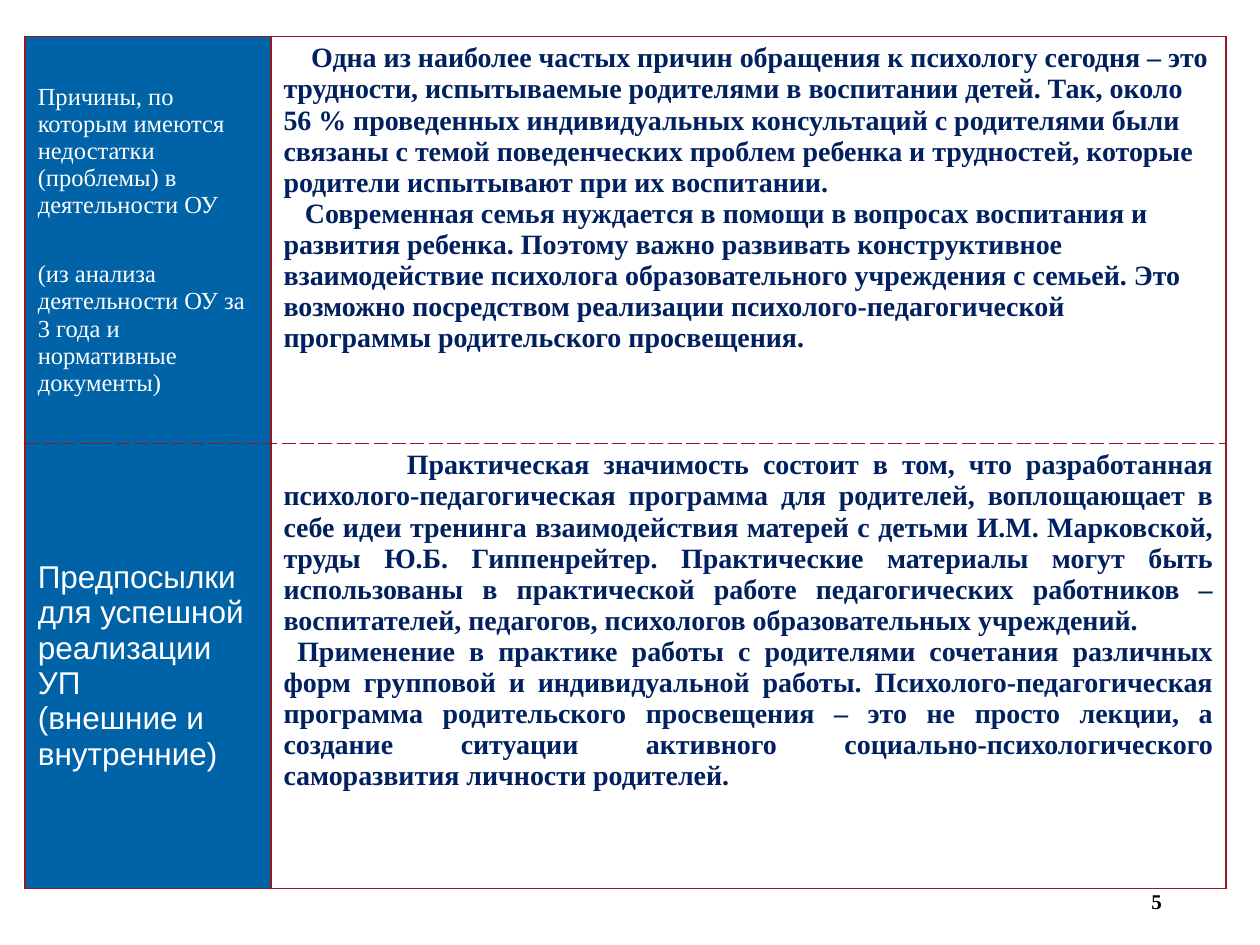
"""Build a slide with a two-row table of causes and preconditions."""
import pptx
import pptx.dml.color
import pptx.enum.text
import pptx.oxml
import pptx.oxml.ns
import pptx.util
from pptx.util import Inches

BLUE = pptx.dml.color.RGBColor(0x00, 0x62, 0xA7)
NAVY = pptx.dml.color.RGBColor(0x00, 0x20, 0x60)
RED = pptx.dml.color.RGBColor(0x92, 0x1A, 0x1D)
WHITE = pptx.dml.color.RGBColor(0xFF, 0xFF, 0xFF)
BLACK = pptx.dml.color.RGBColor(0x00, 0x00, 0x00)
SERIF, SANS = "Times New Roman", "Arial"
ALIGN = pptx.enum.text.PP_ALIGN
MIDDLE = pptx.enum.text.MSO_ANCHOR.MIDDLE
TOP = pptx.enum.text.MSO_ANCHOR.TOP

REASONS = [
    "Причины, по которым имеются недостатки (проблемы) в деятельности ОУ",
    "(из анализа деятельности ОУ за 3 года и нормативные документы)",
]
REQUESTS = [
    "Одна из наиболее частых причин обращения к психологу сегодня – это трудности, "
    "испытываемые родителями в воспитании детей. Так, около 56 % проведенных "
    "индивидуальных консультаций с родителями были связаны с темой поведенческих "
    "проблем ребенка и трудностей, которые родители испытывают при их воспитании.",
    "Современная семья нуждается в помощи в вопросах воспитания и развития ребенка. "
    "Поэтому важно развивать конструктивное взаимодействие психолога образовательного "
    "учреждения с семьей. Это возможно посредством реализации психолого-педагогической "
    "программы родительского просвещения.",
]
PRECONDITIONS = ["Предпосылки для успешной реализации УП", "(внешние и внутренние)"]
SIGNIFICANCE = [
    "Практическая значимость состоит в том, что разработанная "
    "психолого-педагогическая программа для родителей, воплощающает в себе идеи "
    "тренинга взаимодействия матерей с детьми И.М. Марковской, труды Ю.Б. Гиппенрейтер. "
    "Практические материалы могут быть использованы в практической работе "
    "педагогических работников – воспитателей, педагогов, психологов образовательных "
    "учреждений.",
    "Применение в практике работы с родителями сочетания различных форм групповой и "
    "индивидуальной работы. Психолого-педагогическая программа родительского "
    "просвещения – это не просто лекции, а создание ситуации активного "
    "социально-психологического саморазвития личности родителей.",
]


class Builder:
    """Holds the style and the current slide."""

    def __init__(self, s):
        """Keep the slide to draw on."""
        self.s = s

    def fill_text(self, tf, texts, size, color, font=SERIF, bold=False,
                  align=ALIGN.LEFT, gap=0, indents=()):
        """Fill a text frame and format its paragraphs."""
        tf.text = "\n".join(texts)
        for p in tf.paragraphs:
            p.alignment = align
            p.space_before = p.space_after = pptx.util.Pt(gap)
            for r in p.runs:
                r.font.name, r.font.size = font, pptx.util.Pt(size)
                r.font.bold, r.font.color.rgb = bold, color
        for p, indent in zip(tf.paragraphs, indents):
            pPr = p._p.get_or_add_pPr()
            pPr.set("marL", "0")
            pPr.set("indent", str(Inches(indent)))

    def text(self, texts, left, top, width, height, **style):
        """Add a text box."""
        tf = self.s.shapes.add_textbox(
            Inches(left), Inches(top), Inches(width), Inches(height)).text_frame
        tf.word_wrap = True
        tf.vertical_anchor = MIDDLE
        self.fill_text(tf, texts, **style)

    def table(self, left, top, widths, heights):
        """Add a plain table and return it."""
        table = self.s.shapes.add_table(
            len(heights), len(widths), Inches(left), Inches(top),
            Inches(sum(widths)), Inches(sum(heights))).table
        table.first_row = table.horz_banding = False
        for column, width in zip(table.columns, widths):
            column.width = Inches(width)
        for row, height in zip(table.rows, heights):
            row.height = Inches(height)
        return table

    def cell(self, cell, texts, fill, anchor, dashed, **style):
        """Fill one cell and rule its borders, with one side dashed."""
        self.fill_text(cell.text_frame, texts, **style)
        cell.vertical_anchor = anchor
        tcPr = cell._tc.get_or_add_tcPr()
        for side in ("lnL", "lnR", "lnT", "lnB"):
            dash = "sysDash" if side == dashed else "solid"
            tcPr.append(pptx.oxml.parse_xml(
                f'<a:{side} {pptx.oxml.ns.nsdecls("a")} w="{pptx.util.Pt(1)}">'
                f'<a:solidFill><a:srgbClr val="{RED}"/></a:solidFill>'
                f'<a:prstDash val="{dash}"/></a:{side}>'))
        cell.fill.solid()
        cell.fill.fore_color.rgb = fill


def main():
    """Build and save the slide."""
    prs = pptx.Presentation()
    prs.slide_width, prs.slide_height = Inches(10), Inches(7.5)
    b = Builder(prs.slides.add_slide(prs.slide_layouts[6]))
    b.text(["5"], 7.07, 6.95, 2.25, 0.4, size=12, color=BLACK, bold=True,
           align=ALIGN.RIGHT)
    table = b.table(0.2, 0.29, [1.95, 7.58], [3.23, 3.53])
    body = dict(size=16, color=NAVY, bold=True)
    b.cell(table.cell(0, 0), REASONS, BLUE, MIDDLE, "lnB",
           size=14, color=WHITE, gap=12)
    b.cell(table.cell(0, 1), REQUESTS, WHITE, TOP, "lnB",
           indents=(0.22, 0.17), **body)
    b.cell(table.cell(1, 0), PRECONDITIONS, BLUE, MIDDLE, "lnT",
           size=18, color=WHITE, font=SANS)
    b.cell(table.cell(1, 1), SIGNIFICANCE, WHITE, TOP, "lnT",
           align=ALIGN.JUSTIFY, indents=(0.98, 0.11), **body)
    prs.save("out.pptx")


if __name__ == "__main__":
    main()
